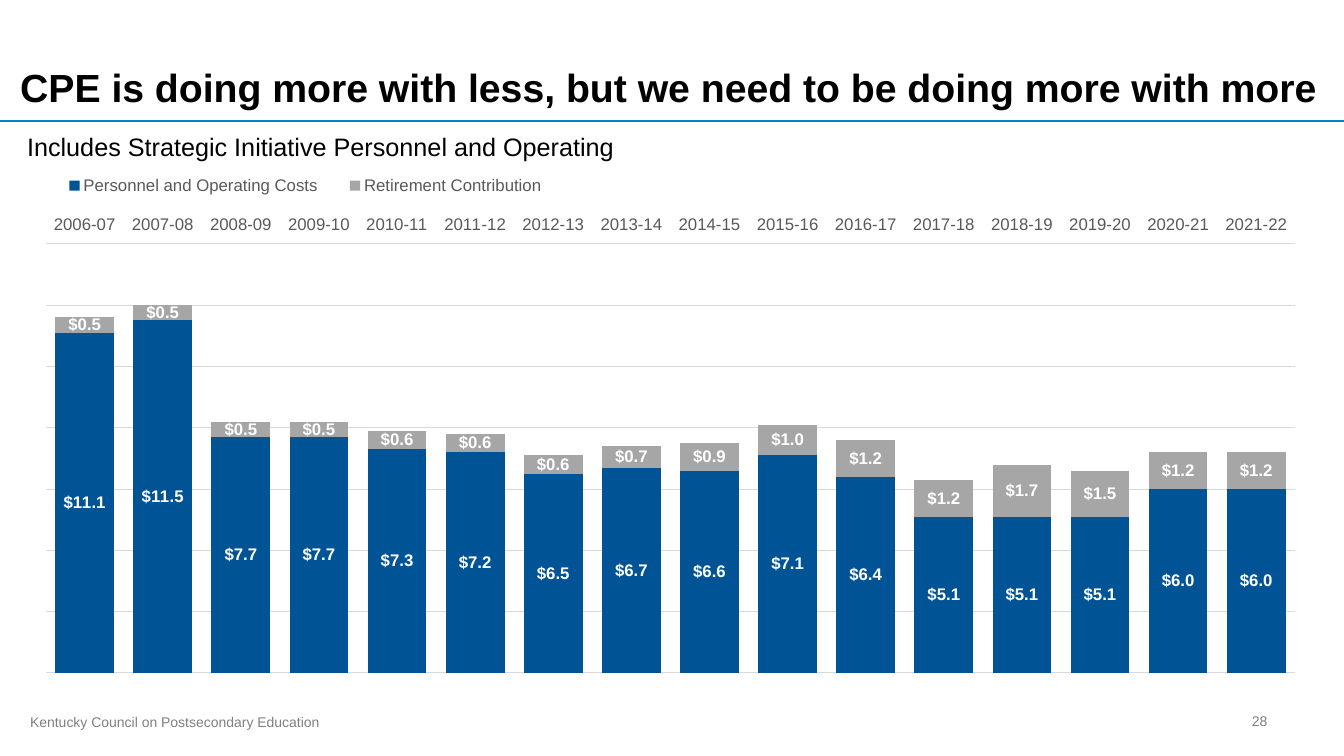
"""Build the slide on operating costs and retirement contributions."""
import lxml.etree
import pptx
import pptx.chart.data
import pptx.dml.color
import pptx.enum.chart
import pptx.enum.shapes
import pptx.enum.text
import pptx.oxml.ns
import pptx.util
from pptx.util import Inches

COLORS = {
    "rule": "0085C3", "personnel": "005495", "retirement": "A6A6A6",
    "grid": "D9D9D9", "axis": "595959", "footer": "808080",
    "black": "000000", "white": "FFFFFF",
}
COSTS = {
    "personnel": ("Personnel and Operating Costs",
                  (11.1, 11.5, 7.7, 7.7, 7.3, 7.2, 6.5, 6.7,
                   6.6, 7.1, 6.4, 5.1, 5.1, 5.1, 6, 6)),
    "retirement": ("Retirement Contribution",
                   (0.5, 0.5, 0.5, 0.5, 0.6, 0.6, 0.6, 0.7,
                    0.9, 1, 1.2, 1.2, 1.7, 1.5, 1.2, 1.2)),
}
YEARS = [f"{year}-{(year + 1) % 100:02d}" for year in range(2006, 2022)]
MONEY = '"$"#,##0.0'


def rgb(name):
    return pptx.dml.color.RGBColor.from_string(COLORS[name])


def format_font(font, size, color, bold=False):
    font.name = "Arial"
    font.size = pptx.util.Pt(size)
    font.bold = bold
    font.color.rgb = rgb(color)


def write_text(frame, text, size=10, color="black", bold=False, align="LEFT"):
    paragraph = frame.paragraphs[0]
    paragraph.alignment = getattr(pptx.enum.text.PP_ALIGN, align)
    run = paragraph.add_run()
    run.text = text
    format_font(run.font, size, color, bold)


def place(element, index, target, left, top, width, height):
    tag = pptx.oxml.ns.qn
    for layout in element.findall(tag("c:layout")):
        element.remove(layout)
    layout = element.makeelement(tag("c:layout"))
    element.insert(index, layout)
    manual = lxml.etree.SubElement(layout, tag("c:manualLayout"))
    settings = {"xMode": "edge", "yMode": "edge",
                "x": left, "y": top, "w": width, "h": height}
    if target:
        settings = {"layoutTarget": target, **settings}
    for name, value in settings.items():
        lxml.etree.SubElement(manual, tag(f"c:{name}")).set("val", str(value))


class SlideBuilder:
    def __init__(self, presentation):
        self.slide = presentation.slides.add_slide(presentation.slide_layouts[6])

    def text(self, text, box, anchor="TOP", insets=(0.1, 0.05, 0.1, 0.05), **style):
        shape = self.slide.shapes.add_textbox(*map(Inches, box))
        frame = shape.text_frame
        frame.word_wrap = True
        frame.vertical_anchor = getattr(pptx.enum.text.MSO_ANCHOR, anchor)
        (frame.margin_left, frame.margin_top,
         frame.margin_right, frame.margin_bottom) = map(Inches, insets)
        write_text(frame, text, **style)

    def rule(self, top, width):
        line = self.slide.shapes.add_connector(
            pptx.enum.shapes.MSO_CONNECTOR.STRAIGHT,
            0, Inches(top), Inches(width), Inches(top))
        line.line.color.rgb = rgb("rule")
        line.line.width = pptx.util.Pt(1.5)
        lxml.etree.SubElement(line._element.spPr, pptx.oxml.ns.qn("a:effectLst"))

    def stacked_columns(self, box, categories, costs):
        data = pptx.chart.data.CategoryChartData(number_format=MONEY)
        data.categories = categories
        for name, values in costs.values():
            data.add_series(name, values)
        kinds = pptx.enum.chart
        chart = self.slide.shapes.add_chart(
            kinds.XL_CHART_TYPE.COLUMN_STACKED, *map(Inches, box), data).chart
        format_font(chart.font, 10, "black")
        chart.has_title = False
        self.style_axes(chart)

        plot = chart.plots[0]
        plot.gap_width = 33
        plot.overlap = 100
        plot.vary_by_categories = False
        for series, color in zip(plot.series, costs):
            series.format.fill.solid()
            series.format.fill.fore_color.rgb = rgb(color)
            labels = series.data_labels
            labels.show_value = True
            labels.position = kinds.XL_LABEL_POSITION.CENTER
            labels.number_format = MONEY
            labels.number_format_is_linked = False
            format_font(labels.font, 12, "white", bold=True)

        chart.has_legend = True
        legend = chart.legend
        legend.position = kinds.XL_LEGEND_POSITION.TOP
        legend.include_in_layout = False
        format_font(legend.font, 12, "axis")
        place(legend._element, 1, None, 0.01, 0.02, 0.41, 0.06)
        plot_area = chart._chartSpace.chart.plotArea
        place(plot_area, 0, "inner", 0.012, 0.16, 0.976, 0.811)

    def style_axes(self, chart):
        kinds = pptx.enum.chart
        years, money = chart.category_axis, chart.value_axis
        years.major_tick_mark = kinds.XL_TICK_MARK.NONE
        years.tick_label_position = kinds.XL_TICK_LABEL_POSITION.HIGH
        format_font(years.tick_labels.font, 12, "axis")
        money.minimum_scale, money.maximum_scale, money.major_unit = 0, 14, 2
        money.visible = False
        money.has_major_gridlines = True
        for line in (years.format.line, money.major_gridlines.format.line):
            line.color.rgb = rgb("grid")
            line.width = pptx.util.Pt(0.75)


def main():
    presentation = pptx.Presentation()
    presentation.slide_width = Inches(13.33)
    presentation.slide_height = Inches(7.5)
    builder = SlideBuilder(presentation)
    builder.rule(1.2, 13.33)
    builder.text("Kentucky Council on Postsecondary Education",
                 (0.2, 7.03, 8.5, 0.27), color="footer")
    builder.text("CPE is doing more with less, but we need to be doing more with more",
                 (0, 0, 13.33, 1.2), anchor="BOTTOM", insets=(0.2, 0.05, 0.2, 0.1),
                 size=28, bold=True)
    builder.stacked_columns((0.3, 1.58, 12.7, 5.25), YEARS, COSTS)
    builder.text("28", (12.11, 6.95, 0.56, 0.4), anchor="MIDDLE",
                 color="footer", align="RIGHT")
    builder.text("Includes Strategic Initiative Personnel and Operating",
                 (0.17, 1.25, 12.67, 0.4), size=18)
    presentation.save("out.pptx")


if __name__ == "__main__":
    main()
